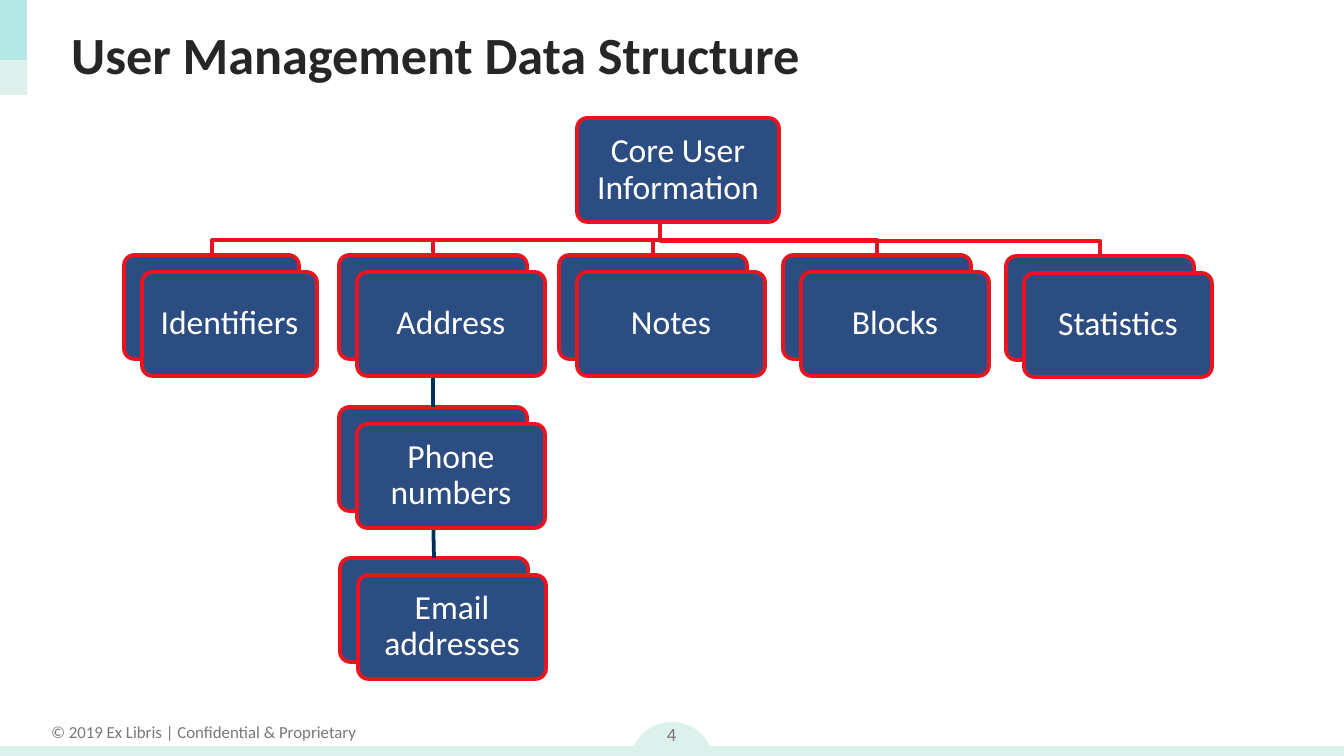
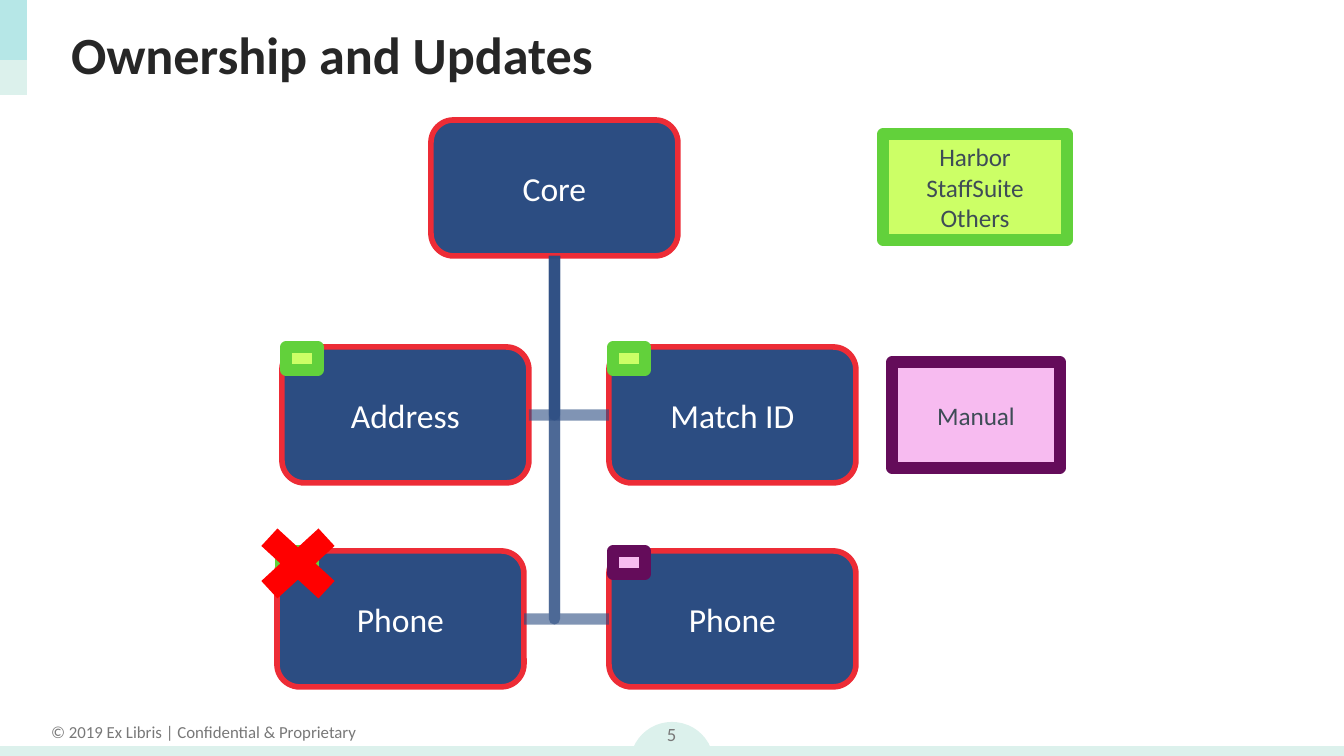
"""Builds two slides on user management data: its structure and its ownership."""
import pptx
import pptx.dml.color
import pptx.enum.shapes
import pptx.enum.text
import pptx.oxml.ns
import pptx.oxml.xmlchemy
import pptx.util

PX = 914400 / 134.4
FONT = "Calibri"
COLORS = {
    "mint": "DCF1EC", "teal": "50CFDA", "title": "262626", "footer": "787878",
    "navy": "2C4D82", "white": "FFFFFF", "red": "E8141F", "stem": "002F5D",
    "border": "ED2C36", "cross": "FF0000", "legend": "3E4C56",
    "lime": "CCFF66", "green": "62D13B", "pink": "F7BBF0", "purple": "640C5A",
}
SHAPE = pptx.enum.shapes.MSO_SHAPE
CONNECTOR = pptx.enum.shapes.MSO_CONNECTOR
ALIGN = pptx.enum.text.PP_ALIGN
ANCHOR = pptx.enum.text.MSO_ANCHOR

FOOTER = "© 2019 Ex Libris | Confidential & Proprietary"
STRUCTURE_TITLE = "User Management Data Structure"
ROOT = ("Core User Information", (577, 118, 202, 104))
BRANCHES = [
    ("Identifiers", (124, 255, 175, 104)),
    ("Address", (339, 255, 188, 104)),
    ("Notes", (559, 255, 188, 104)),
    ("Blocks", (783, 255, 188, 104)),
    ("Statistics", (1006, 256, 188, 104)),
]
CONTACTS = [
    ("Phone numbers", (339, 407, 188, 104)),
    ("Email addresses", (340, 558, 188, 104)),
]
TRUNK_X, TRUNK_TOP, BUS_RISE = 660, 204, 15
STACK_DX, STACK_DY = 18, 17

OWNERSHIP_TITLE = "Ownership and Updates"
CORE = ("Core", (431, 120))
RECORDS = [
    ("Address", (282, 347), "source"),
    ("Phone", (277, 551), "source"),
    ("Match ID", (609, 347), "source"),
    ("Phone", (609, 551), "manual"),
]
RECORD_SIZE = (247, 136)
OWNERS = {
    "source": (["Harbor", "StaffSuite", "Others"], (883, 134, 184, 106), "lime", "green"),
    "manual": (["Manual"], (892, 362, 168, 106), "pink", "purple"),
}
TAG_SIZE, TAG_INSET = (32, 23), 4
CROSS = (243, 513, 110, 101)


def emu(*lengths):
    return [round(length * PX) for length in lengths]


def rgb(name):
    return pptx.dml.color.RGBColor.from_string(COLORS[name])


def set_opacity(properties, percent):
    color = next(properties.iter(pptx.oxml.ns.qn("a:srgbClr")))
    alpha = pptx.oxml.xmlchemy.OxmlElement("a:alpha")
    alpha.set("val", str(percent * 1000))
    color.append(alpha)


def set_line(line, color, width):
    line.color.rgb = rgb(color)
    line.width = pptx.util.Pt(width)


def write(shape, lines, size, color, bold=False, align=ALIGN.CENTER,
          anchor=ANCHOR.MIDDLE, insets=None, spacing=None, wrap=True):
    frame = shape.text_frame
    frame.word_wrap = wrap
    frame.vertical_anchor = anchor
    if insets:
        frame.margin_left, frame.margin_top = emu(*insets)
        frame.margin_right, frame.margin_bottom = emu(*insets)
    frame.text = "\n".join(lines)
    for paragraph in frame.paragraphs:
        paragraph.alignment = align
        if spacing:
            paragraph.line_spacing = spacing
        font = paragraph.font
        font.name, font.size, font.bold = FONT, pptx.util.Pt(size), bold
        font.color.rgb = rgb(color)


def add_label(slide, box, text, size, color, **style):
    write(slide.shapes.add_textbox(*emu(*box)), [text], size, color, **style)


def add_block(slide, kind, box, fill, border=None, width=0):
    block = slide.shapes.add_shape(kind, *emu(*box))
    block.shadow.inherit = False
    block.fill.solid()
    block.fill.fore_color.rgb = rgb(fill)
    if border:
        set_line(block.line, border, width)
    else:
        block.line.fill.background()
    return block


def add_link(slide, kind, begin, begin_side, end, end_side, color, width):
    link = slide.shapes.add_connector(kind, 0, 0, 0, 0)
    link.begin_connect(begin, begin_side)
    link.end_connect(end, end_side)
    set_line(link.line, color, width)
    link._element.spPr.append(pptx.oxml.xmlchemy.OxmlElement("a:effectLst"))
    return link


def add_drop(slide, core, record):
    x = core.left + core.width // 2
    top = core.top + core.height
    y = record.top + record.height // 2
    leftward = record.left < core.left
    side_x = record.left + record.width if leftward else record.left
    link = add_link(slide, CONNECTOR.ELBOW, core, 2, record, 3 if leftward else 1, "navy", 6)
    properties = link._element.spPr
    set_opacity(properties, 60)
    properties.find(pptx.oxml.ns.qn("a:prstGeom")).set("prst", "bentConnector2")
    link.width, link.height = y - top, abs(side_x - x)
    link.left = (x + side_x - link.width) // 2
    link.top = (top + y - link.height) // 2
    frame = properties.find(pptx.oxml.ns.qn("a:xfrm"))
    frame.set("rot", str((90 if leftward else 270) * 60000))
    frame.set("flipH", "0" if leftward else "1")
    frame.set("flipV", "0")


def start_slide(deck, title, number):
    slide = deck.slides.add_slide(deck.slide_layouts[6])
    add_block(slide, SHAPE.OVAL, (630, 722, 84, 84), "mint")
    add_label(slide, (36, 715, 335, 34), FOOTER, 9, "footer", anchor=ANCHOR.TOP, wrap=False)
    add_block(slide, SHAPE.RECTANGLE, (0, 746, 1344, 15), "mint")
    add_block(slide, SHAPE.RECTANGLE, (0, 0, 27, 95), "mint")
    accent = add_block(slide, SHAPE.RECTANGLE, (0, 0, 27, 60), "teal")
    set_opacity(accent._element.spPr, 27)
    add_label(slide, (632, 707, 79, 54), str(number), 10, "footer")
    add_label(slide, (58, 11, 1238, 85), title, 28, "title", bold=True, align=ALIGN.LEFT)
    return slide


def add_card(slide, box, text=None):
    card = add_block(slide, SHAPE.ROUNDED_RECTANGLE, box, "navy", "red", 2)
    card.adjustments[0] = 0.1
    if text:
        write(card, [text], 18, "white", insets=(13, 13), spacing=0.9)
    return card


def add_bus(slide, box):
    x, y, width, _ = box
    center, bus_y = x + width / 2, y - BUS_RISE
    builder = slide.shapes.build_freeform(TRUNK_X, TRUNK_TOP, scale=PX)
    builder.add_line_segments([(TRUNK_X, bus_y), (center, bus_y), (center, y)], close=False)
    bus = builder.convert_to_shape()
    bus.shadow.inherit = False
    bus.fill.background()
    set_line(bus.line, "red", 2)


def build_structure(deck):
    slide = start_slide(deck, STRUCTURE_TITLE, 4)
    for _, box in BRANCHES:
        add_bus(slide, box)
    name, box = ROOT
    add_card(slide, box, name)
    stacks = BRANCHES + CONTACTS
    backs = {name: add_card(slide, box) for name, box in stacks}
    chain = [backs["Address"]] + [backs[name] for name, _ in CONTACTS]
    for upper, lower in zip(chain, chain[1:]):
        add_link(slide, CONNECTOR.STRAIGHT, upper, 2, lower, 0, "stem", 2)
    for name, (x, y, width, height) in stacks:
        add_card(slide, (x + STACK_DX, y + STACK_DY, width, height), name)


def add_record(slide, name, place):
    box = (*place, *RECORD_SIZE)
    record = add_block(slide, SHAPE.ROUNDED_RECTANGLE, box, "navy", "border", 3)
    write(record, [name], 18, "white", insets=(10, 5))
    return record


def build_ownership(deck):
    slide = start_slide(deck, OWNERSHIP_TITLE, 5)
    core = add_record(slide, *CORE)
    records = [add_record(slide, name, place) for name, place, _ in RECORDS]
    for record in records:
        add_drop(slide, core, record)
    for lines, box, fill, border in OWNERS.values():
        owner = add_block(slide, SHAPE.RECTANGLE, box, fill, border, 6)
        write(owner, lines, 13.5, "legend", insets=(10, 5))
    for _, (x, y), owner in RECORDS:
        fill, border = OWNERS[owner][2:]
        add_block(slide, SHAPE.RECTANGLE, (x + TAG_INSET, y, *TAG_SIZE), fill, border, 6)
    add_block(slide, SHAPE.MATH_MULTIPLY, CROSS, "cross")


def main():
    deck = pptx.Presentation()
    deck.slide_width, deck.slide_height = emu(1344, 756)
    build_structure(deck)
    build_ownership(deck)
    deck.save("out.pptx")


if __name__ == "__main__":
    main()
